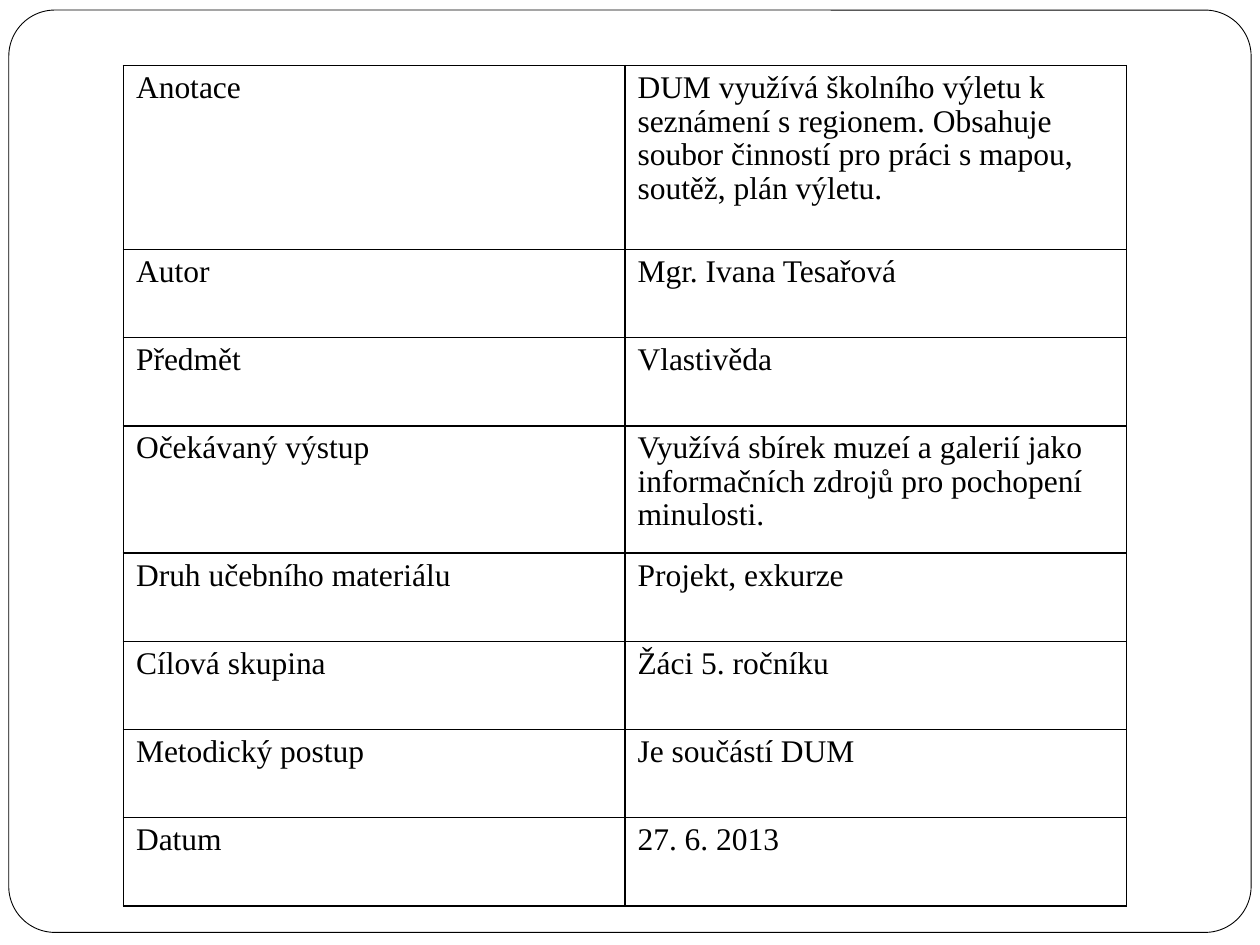
from lxml import etree
from pptx import Presentation
from pptx.dml.color import RGBColor
from pptx.enum import shapes
from pptx.oxml import ns
from pptx.util import Inches, Pt

BLACK = RGBColor(0x00, 0x00, 0x00)
WHITE = RGBColor(0xFF, 0xFF, 0xFF)

COLUMN_WIDTH = 3.98
ROW_HEIGHT = 0.7
ROWS = [
    ("Anotace", "DUM využívá školního výletu k seznámení s regionem. "
     "Obsahuje soubor činností pro práci s mapou, soutěž, plán výletu.", 1.46),
    ("Autor", "Mgr. Ivana Tesařová", ROW_HEIGHT),
    ("Předmět", "Vlastivěda", ROW_HEIGHT),
    ("Očekávaný výstup", "Využívá sbírek muzeí a galerií jako informačních "
     "zdrojů pro pochopení minulosti.", 1.01),
    ("Druh učebního materiálu", "Projekt, exkurze", ROW_HEIGHT),
    ("Cílová skupina", "Žáci 5. ročníku", ROW_HEIGHT),
    ("Metodický postup", "Je součástí DUM", ROW_HEIGHT),
    ("Datum", "27. 6. 2013", ROW_HEIGHT),
]


class SlideBuilder:
    font = "Times New Roman"
    size = Pt(18)
    line_spacing = 0.96
    border = Pt(1)

    def __init__(self, slide):
        self.slide = slide

    def frame(self, left, top, width, height, rounding):
        shape = self.slide.shapes.add_shape(
            shapes.MSO_SHAPE.ROUNDED_RECTANGLE,
            Inches(left), Inches(top), Inches(width), Inches(height))
        shape.adjustments[0] = rounding
        shape.shadow.inherit = False
        shape.fill.solid()
        shape.fill.fore_color.rgb = WHITE
        shape.line.color.rgb = BLACK
        shape.line.width = Pt(0.5)

    def table(self, left, top, rows):
        height = sum(row[2] for row in rows)
        table = self.slide.shapes.add_table(
            len(rows), 2, Inches(left), Inches(top),
            Inches(2 * COLUMN_WIDTH), Inches(height)).table
        table.first_row = table.horz_banding = False
        for column in table.columns:
            column.width = Inches(COLUMN_WIDTH)
        for index, (label, value, row_height) in enumerate(rows):
            table.rows[index].height = Inches(row_height)
            self.cell(table.cell(index, 0), label)
            self.cell(table.cell(index, 1), value)

    def cell(self, cell, content):
        self.borders(cell)
        cell.fill.background()
        paragraph = cell.text_frame.paragraphs[0]
        paragraph.line_spacing = self.line_spacing
        run = paragraph.add_run()
        run.text = content
        run.font.name = self.font
        run.font.size = self.size
        run.font.color.rgb = BLACK

    def borders(self, cell):
        properties = cell._tc.get_or_add_tcPr()
        for side in ("a:lnL", "a:lnR", "a:lnT", "a:lnB"):
            line = etree.SubElement(properties, ns.qn(side), w=str(int(self.border)))
            fill = etree.SubElement(line, ns.qn("a:solidFill"))
            etree.SubElement(fill, ns.qn("a:srgbClr"), val=str(BLACK))


def main():
    presentation = Presentation()
    presentation.slide_width = Inches(10)
    presentation.slide_height = Inches(7.5)
    builder = SlideBuilder(presentation.slides.add_slide(presentation.slide_layouts[6]))

    # Rounded page frame
    builder.frame(0.07, 0.08, 9.86, 7.32, 0.05)

    # Overview of the teaching material
    builder.table(0.98, 0.52, ROWS)

    presentation.save("out.pptx")


if __name__ == "__main__":
    main()
